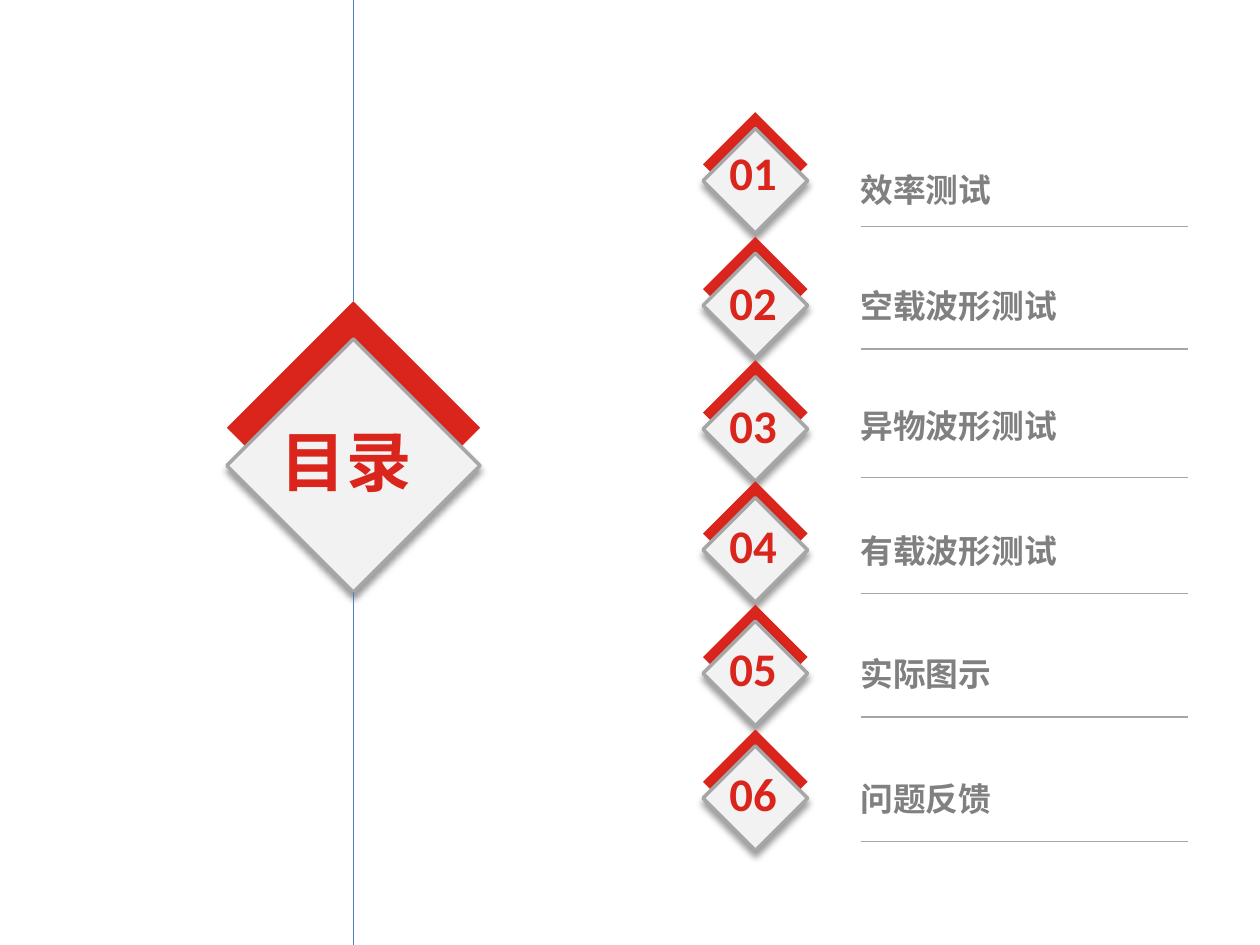
from collections import namedtuple

from lxml import etree
from pptx import Presentation
from pptx.dml.color import RGBColor
from pptx.enum.shapes import MSO_CONNECTOR as Connector, MSO_SHAPE as Shape
from pptx.enum.text import MSO_ANCHOR as Anchor, MSO_AUTO_SIZE as AutoSize, PP_ALIGN as Align
from pptx.oxml.ns import qn
from pptx.util import Inches, Pt

RED, PALE, GRAY, TEXT_GRAY, BLUE = "DA251D", "F2F2F2", "A6A6A6", "808080", "4B7EBC"
CHINESE, LATIN = "Noto Sans CJK SC", "Calibri"

# Vertical positions are in inches from the top of the page.
Entry = namedtuple("Entry", "label badge_top number_top label_top rule_top")
ENTRIES = [
    Entry("效率测试", 0.89, 1.09, 1.30, 1.80),
    Entry("空载波形测试", 1.88, 2.12, 2.22, 2.77),
    Entry("异物波形测试", 2.86, 3.10, 3.17, 3.79),
    Entry("有载波形测试", 3.82, 4.05, 4.16, 4.71),
    Entry("实际图示", 4.80, 5.03, 5.14, 5.69),
    Entry("问题反馈", 5.79, 6.02, 6.13, 6.68),
]


def color(hex_value):
    return RGBColor.from_string(hex_value)


def add_shadow(shape):
    effects = shape.element.spPr.find(qn("a:effectLst"))
    shadow = etree.SubElement(effects, qn("a:outerShdw"), blurRad=str(Pt(4)),
                              dist=str(Pt(3)), dir="5400000", algn="t", rotWithShape="0")
    black = etree.SubElement(shadow, qn("a:srgbClr"), val="000000")
    etree.SubElement(black, qn("a:alpha"), val="40000")


def add_diamond(shapes, left, top, size, fill):
    diamond = shapes.add_shape(Shape.FLOWCHART_DECISION, Inches(left), Inches(top),
                               Inches(size), Inches(size))
    diamond.shadow.inherit = False
    diamond.fill.solid()
    diamond.fill.fore_color.rgb = color(fill)
    diamond.line.fill.background()
    return diamond


def add_badge(shapes, left, top, size, drop):
    """Red diamond with a pale, shadowed one set lower in front of it."""
    back = add_diamond(shapes, left, top, size, RED)
    front = add_diamond(shapes, left, top + drop, size, PALE)
    front.line.color.rgb = color(GRAY)
    front.line.width = Pt(2)
    add_shadow(front)
    return back, front


def write(box, text, size, font, hex_value):
    """Put one bold line in a box that fits its text."""
    frame = box.text_frame
    frame.text = text
    frame.word_wrap = False
    frame.auto_size = AutoSize.SHAPE_TO_FIT_TEXT
    frame.vertical_anchor = Anchor.TOP
    para = frame.paragraphs[0]
    para.alignment = Align.LEFT
    span = para.runs[0]
    span.font.size = Pt(size)
    span.font.bold = True
    span.font.color.rgb = color(hex_value)
    span.font.name = font
    etree.SubElement(span.font._element, qn("a:ea"), typeface=font)


def add_line(page, start, end, hex_value):
    line = page.shapes.add_connector(Connector.STRAIGHT, *map(Inches, start + end))
    line.line.color.rgb = color(hex_value)
    line.line.width = Pt(0.75)
    etree.SubElement(line.element.spPr, qn("a:effectLst"))
    return line


def add_heading(page, left, top, size):
    """Large badge with the title, hung on a line down the whole page."""
    drop, center = 0.3, left + size / 2
    back, front = add_badge(page.shapes, left, top, size, drop)
    upper = add_line(page, (center, top), (center, 0), BLUE)
    upper.begin_connect(back, 0)
    lower = add_line(page, (center, top + drop + size), (center, 7.5), BLUE)
    lower.begin_connect(front, 2)

    title = page.shapes.title
    title.left, title.top = Inches(left + 0.33), Inches(top + 0.9)
    title.width, title.height = Inches(1.24), Inches(0.72)
    write(title, "目录", 37.3, CHINESE, RED)
    page.shapes.element.append(title.element)  # in front of the badge


def add_entry(page, left, number, entry):
    group = page.shapes.add_group_shape()
    add_badge(group.shapes, left, entry.badge_top, 0.83, 0.13)
    number_box = group.shapes.add_textbox(Inches(left + 0.11), Inches(entry.number_top),
                                          Inches(0.62), Inches(0.55))
    write(number_box, f"{number:02}", 26.7, LATIN, RED)

    label_width = 0.2 + 0.26 * len(entry.label)
    label_box = page.shapes.add_textbox(Inches(left + 1.15), Inches(entry.label_top),
                                        Inches(label_width), Inches(0.41))
    write(label_box, entry.label, 18.7, CHINESE, TEXT_GRAY)
    add_line(page, (left + 1.25, entry.rule_top), (left + 3.85, entry.rule_top), GRAY)


def main():
    deck = Presentation()
    deck.slide_width, deck.slide_height = Inches(10), Inches(7.5)
    page = deck.slides.add_slide(deck.slide_layouts.get_by_name("Title Only"))
    add_heading(page, 1.8, 2.39, 2.01)
    for number, entry in enumerate(ENTRIES, start=1):
        add_entry(page, 5.58, number, entry)
    deck.save("out.pptx")


if __name__ == "__main__":
    main()
